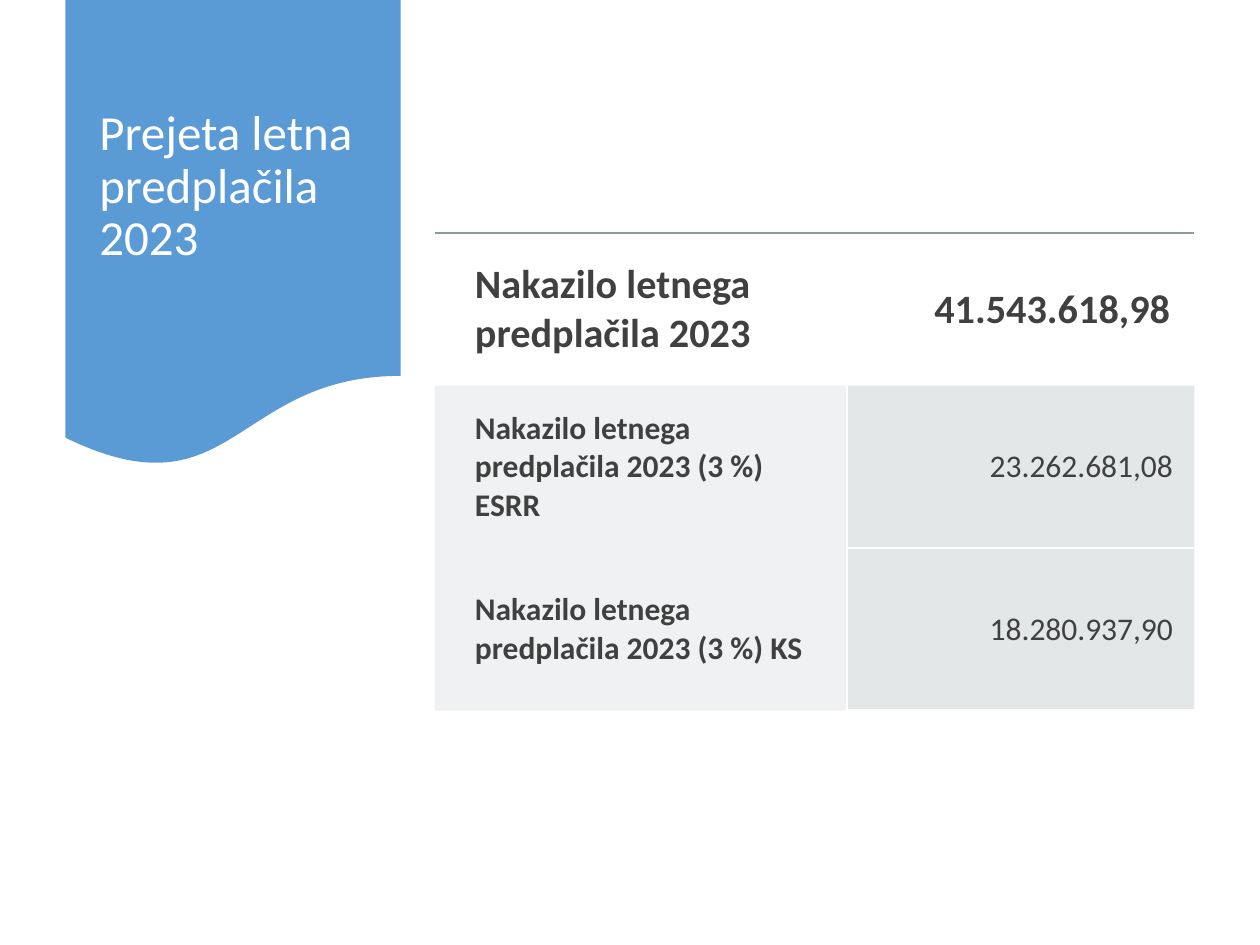
import pptx
import pptx.dml.color
import pptx.enum.shapes
import pptx.enum.text
import pptx.oxml
import pptx.oxml.ns
import pptx.util
from pptx.util import Inches

THEME = {
    "font": "Calibri", "banner": "5B9BD5", "light": "FFFFFF", "ink": "404040",
    "rule": "8F9A9D", "cell": "B4BCBE", "label_opacity": 20, "amount_opacity": 35,
    "title_size": 28, "total_size": 23, "row_size": 18, "border_width": 1.5,
    "no_table_style": "{2D5ABB26-0587-4C30-8999-92F81FD0307C}",
}
TITLE = "Prejeta letna predplačila 2023"
PAYMENTS = [
    ("Nakazilo letnega predplačila 2023", "41.543.618,98"),
    ("Nakazilo letnega predplačila 2023 (3 %) ESRR", "23.262.681,08"),
    ("Nakazilo letnega predplačila 2023 (3 %) KS", "18.280.937,90"),
]
COLUMN_WIDTHS = [3.27, 2.76]
ROW_HEIGHTS = [1.21, 1.29, 1.29]
ALIGN = pptx.enum.text.PP_ALIGN
MIDDLE = pptx.enum.text.MSO_ANCHOR.MIDDLE


def color(name):
    return pptx.dml.color.RGBColor.from_string(THEME[name])


def write(frame, text, size, ink="ink", bold=False, align=ALIGN.LEFT):
    frame.word_wrap = True
    para = frame.paragraphs[0]
    para.alignment = align
    span = para.add_run()
    span.text = text
    font = span.font
    font.name = THEME["font"]
    font.size = pptx.util.Pt(THEME[size])
    font.bold = bold
    font.color.rgb = color(ink)
    return para


def fill_cell(cell, opacity):
    cell.fill.solid()
    cell.fill.fore_color.rgb = color("cell")
    tint = cell._tc.tcPr.find(".//" + pptx.oxml.ns.qn("a:srgbClr"))
    tint.append(pptx.oxml.parse_xml(
        f'<a:alpha {pptx.oxml.ns.nsdecls("a")} val="{THEME[opacity] * 1000}"/>'))


def border_cell(cell, sides, name):
    """Draw the given sides, listed in the schema order L, R, T, B."""
    width = pptx.util.Pt(THEME["border_width"])
    for position, side in enumerate(sides):
        cell._tc.get_or_add_tcPr().insert(position, pptx.oxml.parse_xml(
            f'<a:ln{side} {pptx.oxml.ns.nsdecls("a")} w="{width}"><a:solidFill>'
            f'<a:srgbClr val="{THEME[name]}"/></a:solidFill></a:ln{side}>'))


def add_banner(page):
    banner = page.shapes.add_shape(
        pptx.enum.shapes.MSO_SHAPE.FLOWCHART_DOCUMENT,
        Inches(0.52), Inches(0), Inches(2.66), Inches(3.72))
    banner.shadow.inherit = False
    banner.fill.solid()
    banner.fill.fore_color.rgb = color("banner")
    banner.line.fill.background()

    box = page.shapes.add_textbox(Inches(0.69), Inches(0.19), Inches(2.33), Inches(2.59))
    box.text_frame.vertical_anchor = MIDDLE
    para = write(box.text_frame, TITLE, "title_size", ink="light")
    para.line_spacing = 0.9
    para.space_after = pptx.util.Pt(6)


def add_payments(page):
    frame = page.shapes.add_table(
        len(PAYMENTS), len(COLUMN_WIDTHS), Inches(3.45), Inches(1.85),
        Inches(sum(COLUMN_WIDTHS)), Inches(sum(ROW_HEIGHTS)))
    table = frame.table
    table.horz_banding = False
    table._tbl.tblPr.find(pptx.oxml.ns.qn("a:tableStyleId")).text = THEME["no_table_style"]
    for column, width in zip(table.columns, COLUMN_WIDTHS):
        column.width = Inches(width)
    for row, height in zip(table.rows, ROW_HEIGHTS):
        row.height = Inches(height)

    for row_index, payment in enumerate(PAYMENTS):
        is_total = row_index == 0
        for column_index, text in enumerate(payment):
            is_label = column_index == 0
            cell = table.cell(row_index, column_index)
            cell.vertical_anchor = MIDDLE
            cell.margin_left = Inches(0.32)
            cell.margin_right = cell.margin_top = cell.margin_bottom = Inches(
                0.19 if is_total else 0.17)
            write(cell.text_frame, text, "total_size" if is_total else "row_size",
                  bold=is_total or is_label, align=ALIGN.LEFT if is_label else ALIGN.RIGHT)
            if is_total:
                cell.fill.background()
                border_cell(cell, "T", "rule")
            else:
                fill_cell(cell, "label_opacity" if is_label else "amount_opacity")
                sides = "R" if is_label else "LB" if row_index == 1 else "LTB"
                border_cell(cell, sides, "light")


def main():
    deck = pptx.Presentation()
    deck.slide_width, deck.slide_height = Inches(10), Inches(7.5)
    page = deck.slides.add_slide(deck.slide_layouts[6])
    add_banner(page)
    add_payments(page)
    deck.save("out.pptx")


if __name__ == "__main__":
    main()
